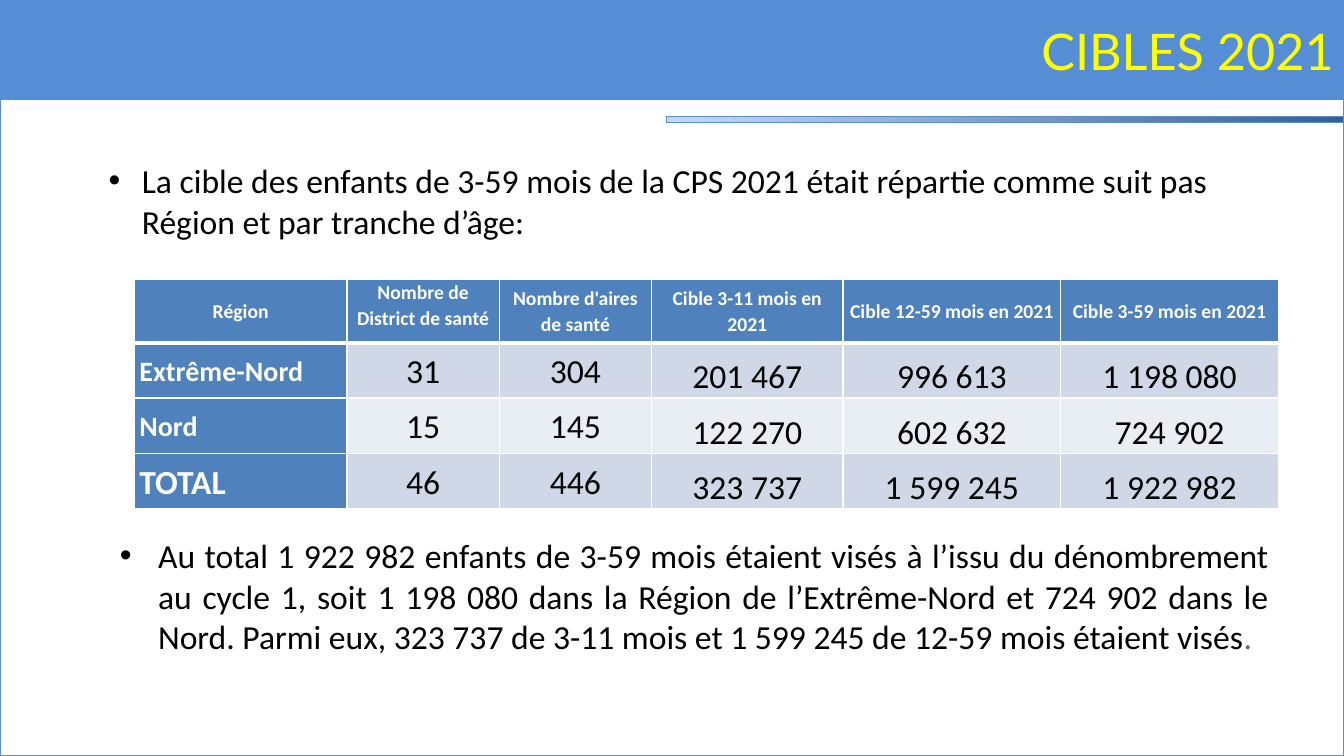
from dataclasses import dataclass

from lxml import etree
from pptx import Presentation
from pptx.dml.color import RGBColor
from pptx.enum.shapes import MSO_SHAPE
from pptx.enum.text import MSO_ANCHOR, MSO_AUTO_SIZE, PP_ALIGN
from pptx.oxml.ns import qn
from pptx.util import Emu, Inches, Pt

RECT = MSO_SHAPE.RECTANGLE
TOP, MIDDLE, BOTTOM = MSO_ANCHOR.TOP, MSO_ANCHOR.MIDDLE, MSO_ANCHOR.BOTTOM
LEFT, CENTER, RIGHT, JUSTIFY = PP_ALIGN.LEFT, PP_ALIGN.CENTER, PP_ALIGN.RIGHT, PP_ALIGN.JUSTIFY
NO_AUTOFIT = MSO_AUTO_SIZE.NONE
SLIDE_W, SLIDE_H = Emu(12192000), Emu(6858000)


@dataclass(frozen=True)
class Theme:
    blue: str = "558ED5"
    bar_start: str = "C6D9F1"
    bar_end: str = "376092"
    header: str = "4F81BD"
    bands: tuple[str, str] = ("D0D8E8", "E9EDF4")
    white: str = "FFFFFF"
    black: str = "000000"
    yellow: str = "FFFF00"
    grey: str = "6C6463"
    title_font: str = "Lato"
    body_font: str = "Calibri"
    title_size: int = 36
    body_size: int = 24
    region_size: int = 20
    header_size: int = 14


@dataclass(frozen=True)
class Box:
    x: float
    y: float
    w: float
    h: float

    def emu(self) -> tuple[Emu, Emu, Emu, Emu]:
        return across(self.x), down(self.y), across(self.w), down(self.h)


@dataclass(frozen=True)
class Bullet:
    box: Box
    text: str
    indent: float
    align: PP_ALIGN = LEFT
    after: float = 0
    ending: str = ""


@dataclass(frozen=True)
class CellStyle:
    fill: str
    color: str
    size: int
    bold: bool
    align: PP_ALIGN
    anchor: MSO_ANCHOR
    inset: float = 0.05


T = Theme()
FRAME = Box(0, 0, 100, 100)
BAR = Box(49.58, 15.47, 50.42, 0.8)
TITLE = Box(0, 0, 100, 13.2)
TABLE = Box(10, 36.93, 85.13, 30.4)
COLUMNS = (15.82, 11.33, 11.33, 14.25, 16.2, 16.2)
ROWS = (8.4, 7.33, 7.33, 7.33)
TARGETS = (
    ("Région", "Nombre de District de santé", "Nombre d'aires de santé",
     "Cible 3-11 mois en 2021", "Cible 12-59 mois en 2021", "Cible 3-59 mois en 2021"),
    ("Extrême-Nord", "31", "304", "201 467", "996 613", "1 198 080"),
    ("Nord", "15", "145", "122 270", "602 632", "724 902"),
    ("TOTAL", "46", "446", "323 737", "1 599 245", "1 922 982"),
)
BULLETS = (
    Bullet(Box(7.35, 20.53, 85.2, 12.13),
           "La cible des enfants de 3-59 mois de la CPS 2021 était répartie comme suit pas "
           "Région et par tranche d’âge:", 0.33, after=10.6),
    Bullet(Box(8.18, 70.13, 87, 17.47),
           "Au total 1 922 982 enfants de 3-59 mois étaient visés à l’issu du dénombrement "
           "au cycle 1, soit 1 198 080 dans la Région de l’Extrême-Nord et 724 902 dans le "
           "Nord. Parmi eux, 323 737 de 3-11 mois et 1 599 245 de 12-59 mois étaient visés",
           0.38, JUSTIFY, ending="."),
)


def across(share: float) -> Emu:
    return Emu(round(SLIDE_W * share / 100))


def down(share: float) -> Emu:
    return Emu(round(SLIDE_H * share / 100))


def rgb(color: str) -> RGBColor:
    return RGBColor.from_string(color)


def set_font(font, name: str, size: float, color: str, bold: bool = False) -> None:
    font.name, font.size, font.bold = name, Pt(size), bold
    font.color.rgb = rgb(color)


def set_line(shape, width: float) -> None:
    shape.line.color.rgb = rgb(T.blue)
    shape.line.width = Pt(width)


def add_rect(s, box: Box, width: float):
    sp = s.shapes.add_shape(RECT, *box.emu())
    sp.shadow.inherit = False
    set_line(sp, width)
    return sp


def add_backdrop(s) -> None:
    add_rect(s, FRAME, 2).fill.background()
    fill = add_rect(s, BAR, 0.75).fill
    fill.gradient()
    fill.gradient_angle = 0
    for stop, color in zip(fill.gradient_stops, (T.bar_start, T.bar_end)):
        stop.color.rgb = rgb(color)


def add_title(s, text: str) -> None:
    sp = s.shapes.title
    sp.left, sp.top, sp.width, sp.height = TITLE.emu()
    sp.fill.solid()
    sp.fill.fore_color.rgb = rgb(T.blue)
    set_line(sp, 0.75)
    tf = sp.text_frame
    tf.text = text
    tf.auto_size, tf.vertical_anchor = NO_AUTOFIT, MIDDLE
    p = tf.paragraphs[0]
    p.alignment = RIGHT
    set_font(p.font, T.title_font, T.title_size, T.yellow)


def add_bullet(s, bullet: Bullet) -> None:
    tf = s.shapes.add_textbox(*bullet.box.emu()).text_frame
    tf.word_wrap = True
    p = tf.paragraphs[0]
    p.alignment, p.space_after = bullet.align, Pt(bullet.after)
    set_font(p.font, T.body_font, T.body_size, T.black)
    p.add_run().text = bullet.text
    if bullet.ending:
        r = p.add_run()
        r.text = bullet.ending
        r.font.color.rgb = rgb(T.grey)
    pPr = p._p.get_or_add_pPr()
    pPr.set("marL", str(Inches(bullet.indent)))
    pPr.set("indent", str(-Inches(bullet.indent)))
    mark = etree.Element(qn("a:buChar"), char="•")
    pPr.insert_element_before(mark, "a:tabLst", "a:defRPr", "a:extLst")
    mark.addprevious(etree.Element(qn("a:buFont"), typeface="Arial"))


def cell_style(row: int, col: int) -> CellStyle:
    if row == 0:
        anchor = TOP if col == 1 else MIDDLE
        return CellStyle(T.header, T.white, T.header_size, True, CENTER, anchor)
    if col == 0:
        size = T.body_size if row == len(TARGETS) - 1 else T.region_size
        return CellStyle(T.header, T.white, size, True, LEFT, MIDDLE)
    band = T.bands[(row - 1) % 2]
    if col < 3:
        return CellStyle(band, T.black, T.body_size, False, CENTER, MIDDLE)
    return CellStyle(band, T.black, T.body_size, False, CENTER, BOTTOM, 0)


def set_borders(cell, row: int) -> None:
    widths = {"L": 1, "R": 1, "T": 3 if row == 1 else 1, "B": 3 if row == 0 else 1}
    tcPr = cell._tc.get_or_add_tcPr()
    for i, (side, width) in enumerate(widths.items()):
        ln = etree.Element(qn(f"a:ln{side}"), w=str(Pt(width)))
        solid = etree.SubElement(ln, qn("a:solidFill"))
        etree.SubElement(solid, qn("a:srgbClr"), val=T.white)
        tcPr.insert(i, ln)


def fill_cell(cell, text: str, style: CellStyle) -> None:
    cell.fill.solid()
    cell.fill.fore_color.rgb = rgb(style.fill)
    cell.vertical_anchor = style.anchor
    cell.margin_left = cell.margin_right = Inches(style.inset)
    cell.margin_top = cell.margin_bottom = 0
    cell.text = text
    p = cell.text_frame.paragraphs[0]
    p.alignment, p.line_spacing = style.align, 1.07
    set_font(p.font, T.body_font, style.size, style.color, style.bold)


def add_targets(s) -> None:
    table = s.shapes.add_table(len(ROWS), len(COLUMNS), *TABLE.emu()).table
    for column, share in zip(table.columns, COLUMNS):
        column.width = across(share)
    for row, share in zip(table.rows, ROWS):
        row.height = down(share)
    for i, values in enumerate(TARGETS):
        for j, text in enumerate(values):
            cell = table.cell(i, j)
            fill_cell(cell, text, cell_style(i, j))
            set_borders(cell, i)


def main() -> None:
    prs = Presentation()
    prs.slide_width, prs.slide_height = SLIDE_W, SLIDE_H
    s = prs.slides.add_slide(prs.slide_layouts[5])
    add_backdrop(s)
    add_title(s, "CIBLES 2021")
    add_targets(s)
    for bullet in BULLETS:
        add_bullet(s, bullet)
    prs.save("out.pptx")


if __name__ == "__main__":
    main()
